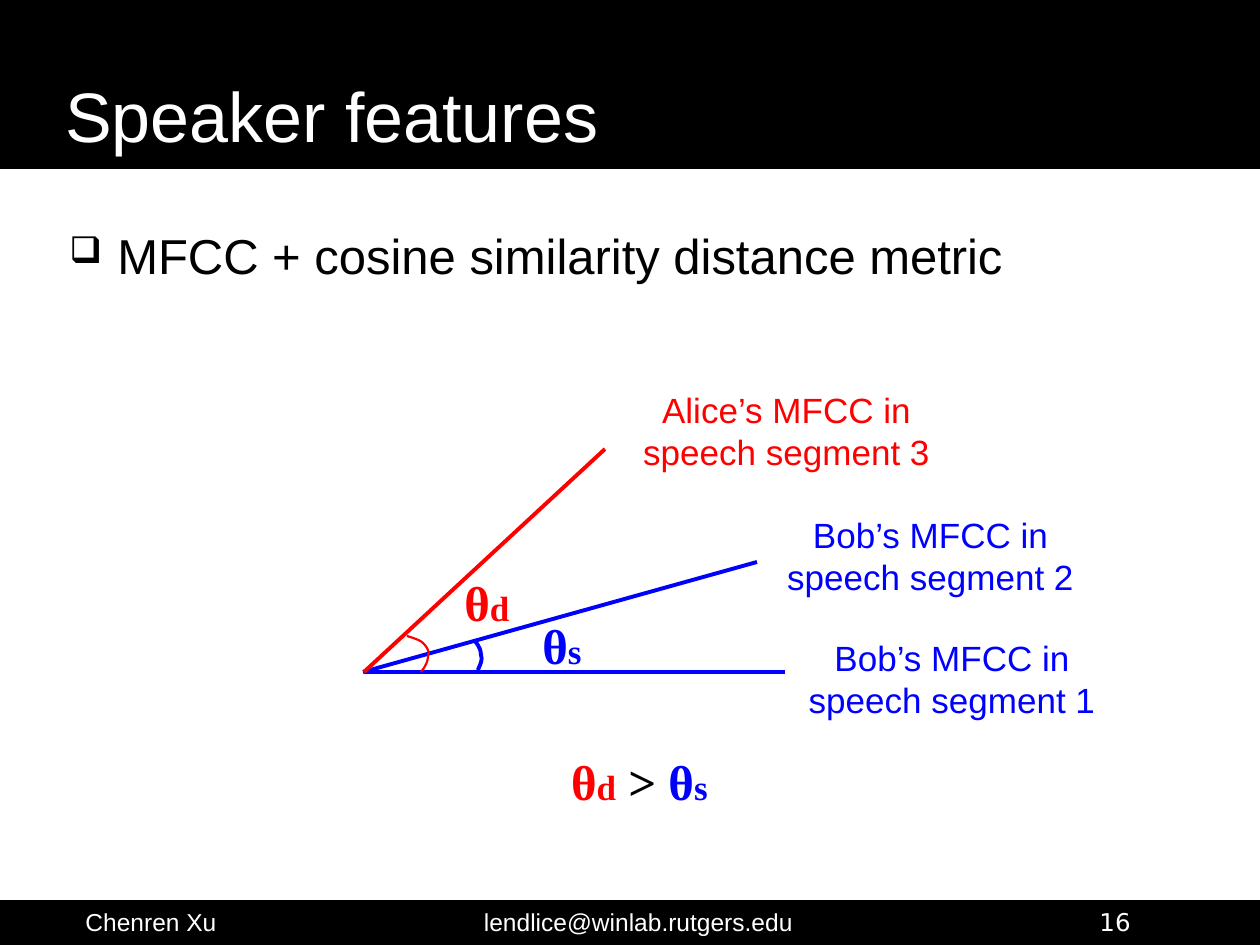
from lxml import etree
from pptx import Presentation, util as u
from pptx.dml.color import RGBColor
from pptx.enum import shapes, text
from pptx.oxml import ns

PX = 914400 / 126
BLACK = RGBColor(0, 0, 0)
WHITE = RGBColor(255, 255, 255)
RED = RGBColor(255, 0, 0)
BLUE = RGBColor(0, 0, 255)
SERIF = "Times New Roman"


def px(*lengths):
    return [round(length * PX) for length in lengths]


def write(content, box, size=20, color=BLACK, font="Arial", bold=False,
          align=text.PP_ALIGN.CENTER, anchor=text.MSO_ANCHOR.TOP):
    """Add a text box; content is a string or a list of (text, size, color)."""
    shape = slide.shapes.add_textbox(*px(*box))
    frame = shape.text_frame
    frame.word_wrap = True
    frame.vertical_anchor = anchor
    paragraph = frame.paragraphs[0]
    paragraph.alignment = align
    runs = [(content, size, color)] if isinstance(content, str) else content
    for words, run_size, run_color in runs:
        run = paragraph.add_run()
        run.text = words
        run.font.name = font
        run.font.size = u.Pt(run_size)
        run.font.bold = bold
        run.font.color.rgb = run_color
    return paragraph


presentation = Presentation()
presentation.slide_width, presentation.slide_height = px(1260, 945)
slide = presentation.slides.add_slide(presentation.slide_layouts[6])

# Header and footer bars
for box in [(0, 0, 1260, 169), (-1, 900, 1261, 45)]:
    bar = slide.shapes.add_shape(shapes.MSO_SHAPE.RECTANGLE, *px(*box))
    bar.shadow.inherit = False
    bar.fill.solid()
    bar.fill.fore_color.rgb = BLACK
    bar.line.fill.background()

# Footer
write("Chenren Xu", (54, 901, 194, 38), size=14, color=WHITE)
write("lendlice@winlab.rutgers.edu", (425, 901, 427, 38), size=14, color=WHITE)
write("16", (1087, 901, 121, 37), size=14, color=WHITE, font="DejaVu Sans",
      align=text.PP_ALIGN.LEFT)

# Title
write("Speaker features", (53, 58, 1152, 105), size=40, color=WHITE,
      align=text.PP_ALIGN.LEFT, anchor=text.MSO_ANCHOR.BOTTOM)

# Bullet
bullet = write("MFCC + cosine similarity distance metric", (57, 190, 1149, 683),
               size=28, align=text.PP_ALIGN.LEFT)
bullet.line_spacing = 1.5
bullet.space_before = u.Pt(5.6)
properties = bullet._p.get_or_add_pPr()
indent = px(48)[0]
properties.set("marL", str(indent))
properties.set("indent", str(-indent))
etree.SubElement(properties, ns.qn("a:buSzPct")).set("val", "75000")
etree.SubElement(properties, ns.qn("a:buChar")).set("char", "❑")

# Feature vectors
for start, end, color in [((364, 672), (785, 672), BLUE),
                          ((363, 672), (757, 562), BLUE),
                          ((364, 672), (605, 449), RED)]:
    vector = slide.shapes.add_connector(shapes.MSO_CONNECTOR.STRAIGHT,
                                        *px(*start, *end))
    vector.line.color.rgb = color
    vector.line.width = u.Pt(2.25)
    etree.SubElement(vector._element.spPr, ns.qn("a:effectLst"))

# Angle arcs: chained cubic curves, sampled into short segments
STEPS = 12
for nodes, color, width in [
        ([(407, 636), (413, 638), (420, 640), (423, 643), (426, 646),
          (430, 651), (428, 656), (428, 662), (425, 667), (421, 672)], RED, 1.25),
        ([(475, 641), (479, 646), (481, 650), (481, 655),
          (483, 660), (480, 665), (478, 670)], BLUE, 2.25)]:
    points = []
    for first in range(0, len(nodes) - 1, 3):
        for step in range(1, STEPS + 1):
            t = step / STEPS
            weights = ((1 - t) ** 3, 3 * t * (1 - t) ** 2,
                       3 * t ** 2 * (1 - t), t ** 3)
            curve = nodes[first:first + 4]
            points.append(px(*(sum(w * node[axis] for w, node in zip(weights, curve))
                               for axis in (0, 1))))
    builder = slide.shapes.build_freeform(*px(*nodes[0]))
    builder.add_line_segments(points, close=False)
    arc = builder.convert_to_shape()
    arc.shadow.inherit = False
    arc.fill.background()
    arc.line.color.rgb = color
    arc.line.width = u.Pt(width)

# Vector labels
write("Bob’s MFCC in speech segment 1", (785, 630, 334, 97), color=BLUE)
write("Bob’s MFCC in speech segment 2", (770, 507, 321, 97), color=BLUE)
write("Alice’s MFCC in speech segment 3", (620, 382, 333, 97), color=RED)

# Angle labels and their comparison
theta_s = [("θ", 28, BLUE), ("s", 20, BLUE)]
theta_d = [("θ", 28, RED), ("d", 20, RED)]
comparison = theta_d + [(" ", 28, RED), ("> ", 28, BLACK)] + theta_s + [(" ", 28, RED)]
for runs, box in [(theta_s, (519, 609, 86, 72)),
                  (theta_d, (444, 566, 86, 72)),
                  (comparison, (479, 745, 333, 72))]:
    write(runs, box, font=SERIF, bold=True)

presentation.save("out.pptx")
